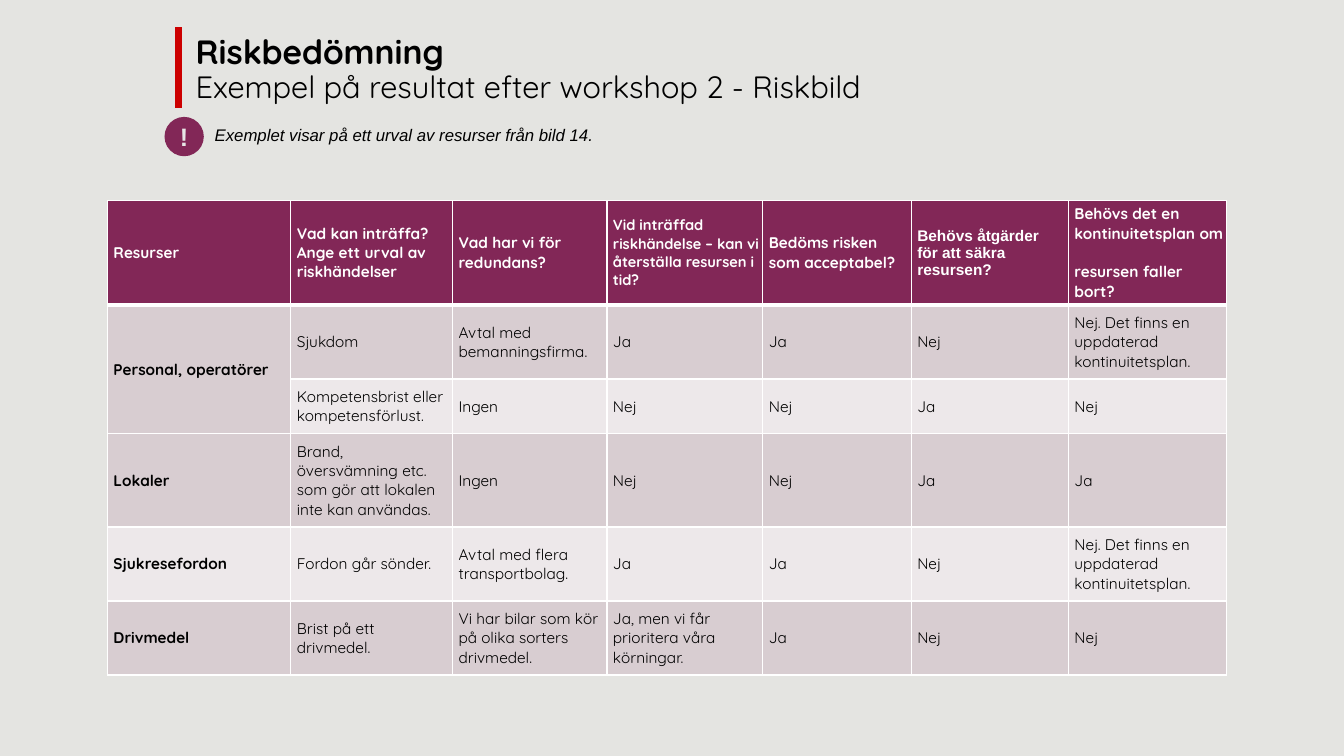
from copy import deepcopy
from dataclasses import dataclass

from lxml import etree
from pptx import Presentation
from pptx.dml.color import RGBColor
from pptx.enum import shapes, text
from pptx.oxml import ns
from pptx.util import Pt


@dataclass
class Theme:
    back: str = "E4E4E1"
    plum: str = "822757"
    band: str = "D8CDD1"
    pale: str = "EDE8EA"
    red: str = "CC0000"
    ink: str = "000000"
    white: str = "FFFFFF"
    mist: str = "E7E6E6"
    font: str = "Quicksand"
    plain: str = "Arial"
    head: float = 24
    sub: float = 22
    mark: float = 18
    note: float = 12
    body: float = 11
    small: float = 10.5


def rgb(code):
    return RGBColor.from_string(code)


def write(par, words, font, size, color, bold=False, italic=False):
    """Add formatted words to a paragraph; a newline is a line break."""
    for i, line in enumerate(words.split("\n")):
        if i:
            par.add_line_break()
        if line:
            run = par.add_run()
            run.text = line
            face = run.font
            face.name, face.size = font, Pt(size)
            face.bold, face.italic = bold, italic
            face.color.rgb = rgb(color)
    # Line breaks take the size of their text
    for mark in par._p.findall(ns.qn("a:br")):
        if len(mark) == 0:
            mark.append(deepcopy(run._r.rPr))


def inset(box, left, top, right, low):
    box.margin_left, box.margin_top = Pt(left), Pt(top)
    box.margin_right, box.margin_bottom = Pt(right), Pt(low)


class Page:
    def __init__(self, deck, theme):
        self.theme = theme
        self.slide = deck.slides.add_slide(deck.slide_layouts[5])
        self.items = self.slide.shapes
        fill = self.slide.background.fill
        fill.solid()
        fill.fore_color.rgb = rgb(theme.back)

    def title(self, area, head, sub):
        t = self.theme
        box = self.items.title
        box.left, box.top, box.width, box.height = map(Pt, area)
        frame = box.text_frame
        frame.auto_size = text.MSO_AUTO_SIZE.NONE
        frame.vertical_anchor = text.MSO_ANCHOR.MIDDLE
        par = frame.paragraphs[0]
        par.alignment = text.PP_ALIGN.LEFT
        par.line_spacing = 0.9
        write(par, head + "\n", t.font, t.head, t.ink, bold=True)
        write(par, sub, t.font, t.sub, t.ink)

    def rule(self, x, top, end, color, width):
        line = self.items.add_connector(
            shapes.MSO_CONNECTOR.STRAIGHT, Pt(x), Pt(top), Pt(x), Pt(end))
        line.line.color.rgb = rgb(color)
        line.line.width = Pt(width)
        etree.SubElement(line._element.spPr, ns.qn("a:effectLst"))

    def note(self, area, words):
        t = self.theme
        frame = self.items.add_textbox(*map(Pt, area)).text_frame
        frame.word_wrap = True
        frame.auto_size = text.MSO_AUTO_SIZE.SHAPE_TO_FIT_TEXT
        par = frame.paragraphs[0]
        par.space_after = Pt(12)
        write(par, words, t.plain, t.note, t.ink, italic=True)

    def badge(self, x, y, size, sign):
        t = self.theme
        dot = self.items.add_shape(
            shapes.MSO_SHAPE.OVAL, Pt(x), Pt(y), Pt(size), Pt(size))
        dot.shadow.inherit = False
        dot.fill.solid()
        dot.fill.fore_color.rgb = rgb(t.plum)
        dot.line.fill.background()
        frame = dot.text_frame
        inset(frame, 0, 0, 0, 0)
        frame.vertical_anchor = text.MSO_ANCHOR.MIDDLE
        par = frame.paragraphs[0]
        par.alignment = text.PP_ALIGN.CENTER
        write(par, sign, t.plain, t.mark, t.mist, bold=True)

    def edges(self, cell, row):
        widths = {"L": 1, "R": 1, "T": 3 if row == 1 else 1, "B": 1 if row else 3}
        props = cell._tc.get_or_add_tcPr()
        for side, width in widths.items():
            line = etree.SubElement(props, ns.qn(f"a:ln{side}"), w=str(Pt(width)))
            fill = etree.SubElement(line, ns.qn("a:solidFill"))
            etree.SubElement(fill, ns.qn("a:srgbClr"), val=self.theme.white)

    def table(self, area, wide, high, rows):
        t = self.theme
        frame = self.items.add_table(len(rows), len(wide), *map(Pt, area))
        grid = frame.table
        for col, width in zip(grid.columns, wide):
            col.width = Pt(width)
        for row, height in zip(grid.rows, high):
            row.height = Pt(height)
        frame.height = Pt(area[3])
        for r, row in enumerate(rows):
            for c, words in enumerate(row):
                cell = grid.cell(r, c)
                self.edges(cell, r)
                cell.fill.solid()
                shade = t.band if r % 2 else t.pale
                cell.fill.fore_color.rgb = rgb(shade if r else t.plum)
                cell.vertical_anchor = text.MSO_ANCHOR.MIDDLE
                inset(cell, 4.3, *((5.7, 4.3, 5.7) if r else (2.8, 0, 2.8)))
                if words:
                    write(cell.text_frame.paragraphs[0], words,
                          t.plain if (r, c) == (0, 5) else t.font,
                          t.small if (r, c) == (0, 3) else t.body,
                          t.ink if r else t.white, bold=r == 0 or c == 0)
        return grid


ROWS = [
    ["Resurser", "Vad kan inträffa? \nAnge ett urval av riskhändelser",
     "Vad har vi för \nredundans?",
     "Vid inträffad riskhändelse – kan vi återställa resursen i tid?",
     "Bedöms risken som acceptabel?",
     "Behövs åtgärder\nför att säkra resursen?",
     "Behövs det en kontinuitetsplan om \nresursen faller bort?"],
    ["Personal, operatörer", "Sjukdom", "Avtal med bemanningsfirma.",
     "Ja", "Ja", "Nej", "Nej. Det finns en uppdaterad kontinuitetsplan."],
    ["", "Kompetensbrist eller kompetensförlust.", "Ingen",
     "Nej", "Nej", "Ja", "Nej"],
    ["Lokaler", "Brand, översvämning etc. som gör att lokalen inte kan användas.",
     "Ingen", "Nej", "Nej", "Ja", "Ja"],
    ["Sjukresefordon", "Fordon går sönder.", "Avtal med flera transportbolag.",
     "Ja", "Ja", "Nej", "Nej. Det finns en uppdaterad kontinuitetsplan."],
    ["Drivmedel", "Brist på ett drivmedel.",
     "Vi har bilar som kör på olika sorters drivmedel.",
     "Ja, men vi får prioritera våra körningar.", "Ja", "Nej", "Nej"],
]


def main():
    deck = Presentation()
    deck.slide_width, deck.slide_height = Pt(960), Pt(540)
    theme = Theme()
    page = Page(deck, theme)

    # Risk table
    grid = page.table((76.8, 143.3, 799.2, 320.4),
                      [131, 115.5, 110.3, 111.4, 106, 112.3, 112.7],
                      [62, 35.3, 35.3, 35.3, 52.6, 52.6], ROWS)
    grid.cell(1, 0).merge(grid.cell(2, 0))

    # Heading with red bar
    page.title((132.5, 21.6, 707.8, 57.6), "Riskbedömning ",
               "Exempel på resultat efter workshop 2 - Riskbild")
    page.rule(127.5, 19.4, 77, theme.red, 5)

    # Note with exclamation badge
    page.note((146.2, 85.7, 447.8, 21.6),
              "Exemplet visar på ett urval av resurser från bild 14.")
    page.badge(117.5, 83.5, 28.1, "!")

    deck.save("out.pptx")


if __name__ == "__main__":
    main()
